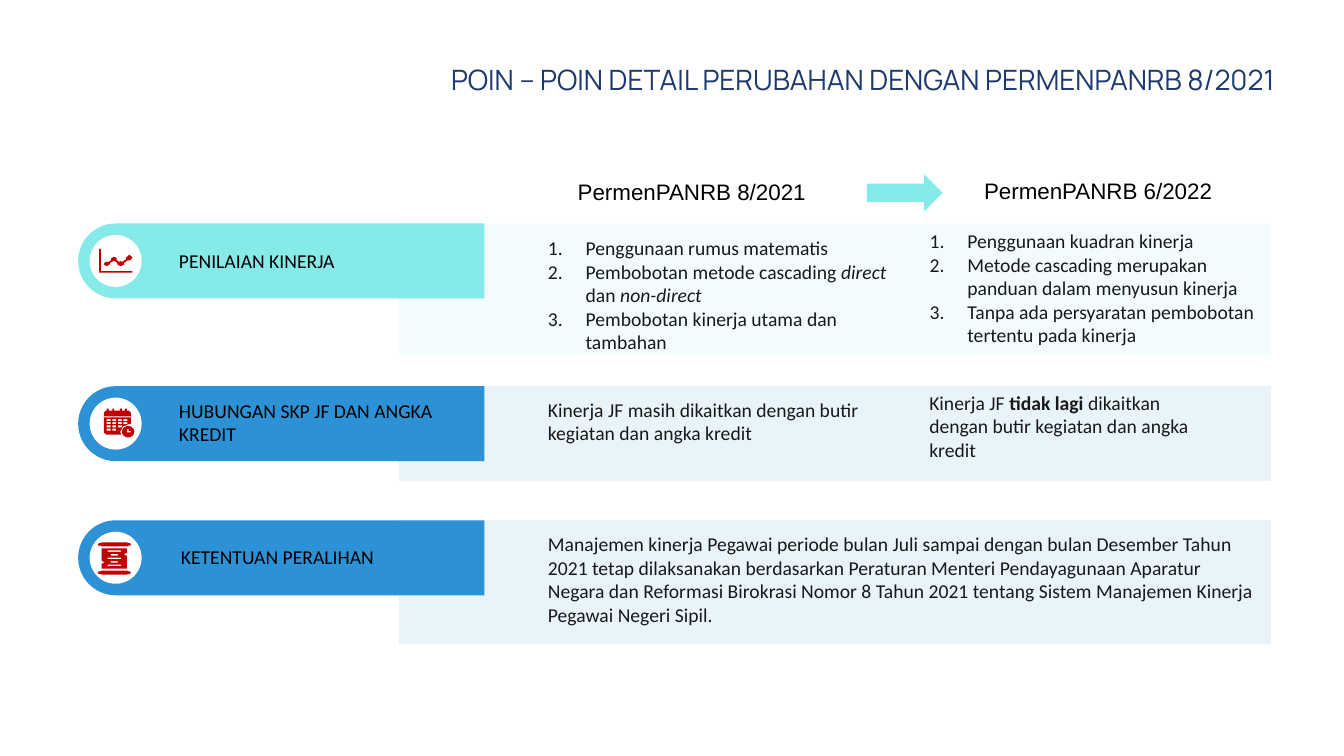
import math

from lxml import etree
from pptx import Presentation
from pptx import util as u
from pptx.dml.color import RGBColor
from pptx.enum import shapes, text
from pptx.oxml import ns

AQUA = RGBColor(0x86, 0xEA, 0xE9)
BLUE = RGBColor(0x2C, 0x92, 0xD5)
NAVY = RGBColor(0x1D, 0x3A, 0x6E)
RED = RGBColor(0xC0, 0x00, 0x00)
WHITE = RGBColor(0xFF, 0xFF, 0xFF)
BLACK = RGBColor(0x00, 0x00, 0x00)
INK = RGBColor(0x19, 0x19, 0x19)
KIND = shapes.MSO_SHAPE

deck = Presentation()
deck.slide_width, deck.slide_height = u.Cm(33.87), u.Cm(19.05)
page = deck.slides.add_slide(deck.slide_layouts[6])


def paint(shape, color):
    shape.shadow.inherit = False
    shape.fill.solid()
    shape.fill.fore_color.rgb = color
    shape.line.fill.background()
    return shape


def write(place, paras, size=14, font="Calibri", color=INK, inset=0.0, spacing=u.Pt(16.8), numbered=False):
    box = page.shapes.add_textbox(*[u.Cm(length) for length in place])
    frame = box.text_frame
    frame.word_wrap = True
    frame.margin_left = frame.margin_right = u.Cm(inset)
    frame.margin_top = frame.margin_bottom = u.Cm(inset / 2)
    for index, spans in enumerate(paras):
        para = frame.paragraphs[0] if index == 0 else frame.add_paragraph()
        para.line_spacing = spacing
        if numbered:
            props = para._p.get_or_add_pPr()
            props.set("marL", str(u.Cm(0.95)))
            props.set("indent", str(-u.Cm(0.95)))
            etree.SubElement(props, ns.qn("a:buFont"), typeface="+mj-lt")
            etree.SubElement(props, ns.qn("a:buAutoNum"), type="arabicPeriod")
        for words, style in spans:
            span = para.add_run()
            span.text = words
            span.font.name, span.font.size = font, u.Pt(size)
            span.font.color.rgb = color
            span.font.bold = style == "bold"
            span.font.italic = style == "italic"
    return box


title = write((8.49, 1.55, 23.9, 3.53), [[("POIN – POIN DETAIL PERUBAHAN DENGAN PERMENPANRB 8/2021", "")]],
              20, "Manrope", NAVY, 0.25, 0.9)
title.text_frame.paragraphs[0].alignment = text.PP_ALIGN.RIGHT

rows = [
    (5.63, 3.31, AQUA, "PENILAIAN KINERJA", 4.51, 6.27),
    (9.73, 2.39, BLUE, "HUBUNGAN SKP JF DAN ANGKA KREDIT", 4.51, 10.04),
    (13.11, 3.12, BLUE, "KETENTUAN PERALIHAN", 4.56, 13.74),
]
pill_left, pill_width, pill_height = 1.97, 10.24, 1.89
for top, height, color, label, label_left, label_top in rows:
    band = paint(page.shapes.add_shape(KIND.RECTANGLE, u.Cm(10.06), u.Cm(top), u.Cm(21.97), u.Cm(height)), color)
    tint = band.element.spPr.find(".//" + ns.qn("a:srgbClr"))
    etree.SubElement(tint, ns.qn("a:alpha"), val="10000")
    shift = (pill_width - pill_height) / 2
    pill = paint(page.shapes.add_shape(KIND.ROUND_2_SAME_RECTANGLE, u.Cm(pill_left + shift), u.Cm(top - shift),
                                       u.Cm(pill_height), u.Cm(pill_width)), color)
    pill.adjustments[0] = 0.5
    pill.rotation = 270
    paint(page.shapes.add_shape(KIND.OVAL, u.Cm(2.26), u.Cm(top + 0.29), u.Cm(1.31), u.Cm(1.31)), WHITE)
    write((label_left, label_top, 6.45, 1.19), [[(label, "")]], color=BLACK)

write((13.81, 5.95, 8.86, 3), [
    [("Penggunaan rumus matematis", "")],
    [("Pembobotan metode cascading ", ""), ("direct ", "italic"), ("dan ", ""), ("non-direct", "italic")],
    [("Pembobotan kinerja utama dan tambahan", "")],
], numbered=True)
write((23.43, 5.77, 8.59, 3), [
    [("Penggunaan kuadran kinerja", "")],
    [("Metode cascading merupakan panduan dalam menyusun kinerja", "")],
    [("Tanpa ada persyaratan pembobotan tertentu pada kinerja", "")],
], numbered=True)
write((13.81, 10.02, 8.33, 1.19), [
    [("Kinerja JF masih dikaitkan dengan butir kegiatan dan angka kredit", "")],
])
write((23.42, 9.85, 6.78, 1.8), [
    [("Kinerja JF ", ""), ("tidak lagi ", "bold"), ("dikaitkan dengan butir kegiatan dan angka kredit", "")],
])
write((13.81, 13.41, 17.81, 2.39), [[(
    "Manajemen kinerja Pegawai periode bulan Juli sampai dengan bulan Desember Tahun 2021 tetap "
    "dilaksanakan berdasarkan Peraturan Menteri Pendayagunaan Aparatur Negara dan Reformasi Birokrasi "
    "Nomor 8 Tahun 2021 tentang Sistem Manajemen Kinerja Pegawai Negeri Sipil.", "")]])

axis = [(2.5, 6.27), (2.54, 6.27), (2.54, 6.83), (3.34, 6.83), (3.34, 6.87), (2.5, 6.87)]
trend = [(3.26, 6.42), (3.18, 6.49), (3.18, 6.53), (3.08, 6.6), (3.04, 6.58), (3, 6.6), (2.94, 6.55),
         (2.94, 6.5), (2.87, 6.47), (2.8, 6.52), (2.8, 6.56), (2.72, 6.61), (2.66, 6.6), (2.61, 6.66),
         (2.69, 6.71), (2.77, 6.66), (2.77, 6.63), (2.85, 6.58), (2.9, 6.58), (2.96, 6.63), (2.96, 6.67),
         (3.04, 6.71), (3.12, 6.67), (3.12, 6.63), (3.22, 6.56), (3.28, 6.56), (3.34, 6.49)]
turns = [math.tau * step / 16 for step in range(16)]
clock = [(3.23 + 0.155 * math.cos(turn), 10.88 + 0.145 * math.sin(turn)) for turn in turns]
hands = [(3.2, 10.82, 0.04, 0.04), (3.2, 10.86, 0.09, 0.04)]
calendar = [(2.62, 10.52), (3.3, 10.52), (3.3, 10.69), (3.23, 10.69), (3.1, 10.75), (3.03, 10.88),
            (3.05, 10.95), (2.68, 10.95), (2.62, 10.9)]
days = [(2.69 + 0.14 * day, 10.56 + 0.08 * week, 0.1, 0.05)
        for week, count in enumerate((4, 4, 3, 2)) for day in range(count)]
header = [(2.62, 10.49), (2.62, 10.4), (2.67, 10.35)]
for ring in (2.69, 2.83, 3.02, 3.15):
    header += [(ring, 10.35), (ring, 10.3), (ring + 0.05, 10.3), (ring + 0.05, 10.35)]
header += [(3.25, 10.35), (3.3, 10.4), (3.3, 10.49)]
rolls = [[(2.46, top + 0.05), (2.49, top + 0.02), (2.52, top + 0.02), (2.57, top), (3.2, top),
          (3.25, top + 0.02), (3.28, top + 0.02), (3.3, top + 0.05), (3.28, top + 0.08), (3.25, top + 0.08),
          (3.2, top + 0.1), (2.57, top + 0.1), (2.52, top + 0.08), (2.49, top + 0.08)]
         for top in (14.38, 13.67)]
scroll = [(2.56, 13.82), (2.56, 14.13), (2.64, 14.17), (2.56, 14.21), (2.56, 14.33), (3.2, 14.33),
          (3.2, 14.01), (3.12, 13.97), (3.2, 13.93), (3.2, 13.82)]
lines = [(2.88 - width / 2, 13.87 + 0.09 * index, width, 0.04)
         for index, width in enumerate((0.33, 0.18, 0.33, 0.18, 0.33))]

icons = [(axis, []), (trend, []), (clock, hands), (calendar, days), (header, []),
         (rolls[0], []), (rolls[1], []), (scroll, lines)]
for outline, holes in icons:
    contours = [outline] + [[(x, y), (x, y + h), (x + w, y + h), (x + w, y)] for x, y, w, h in holes]
    pen = page.shapes.build_freeform(*[u.Cm(length) for length in outline[0]], scale=1.0)
    for contour in contours:
        points = [(u.Cm(x), u.Cm(y)) for x, y in contour]
        pen.move_to(*points[0])
        pen.add_line_segments(points[1:])
    paint(pen.convert_to_shape(), RED)

for left, top, heading in [(14.31, 4.37, "PermenPANRB 8/2021"), (24.55, 4.34, "PermenPANRB 6/2022")]:
    write((left, top, 6.63, 0.94), [[(heading, "")]], 16, "Arial", BLACK, 0.25, 1.0)
paint(page.shapes.add_shape(KIND.RIGHT_ARROW, u.Cm(21.85), u.Cm(4.39), u.Cm(1.91), u.Cm(0.94)), AQUA)

deck.save("out.pptx")
